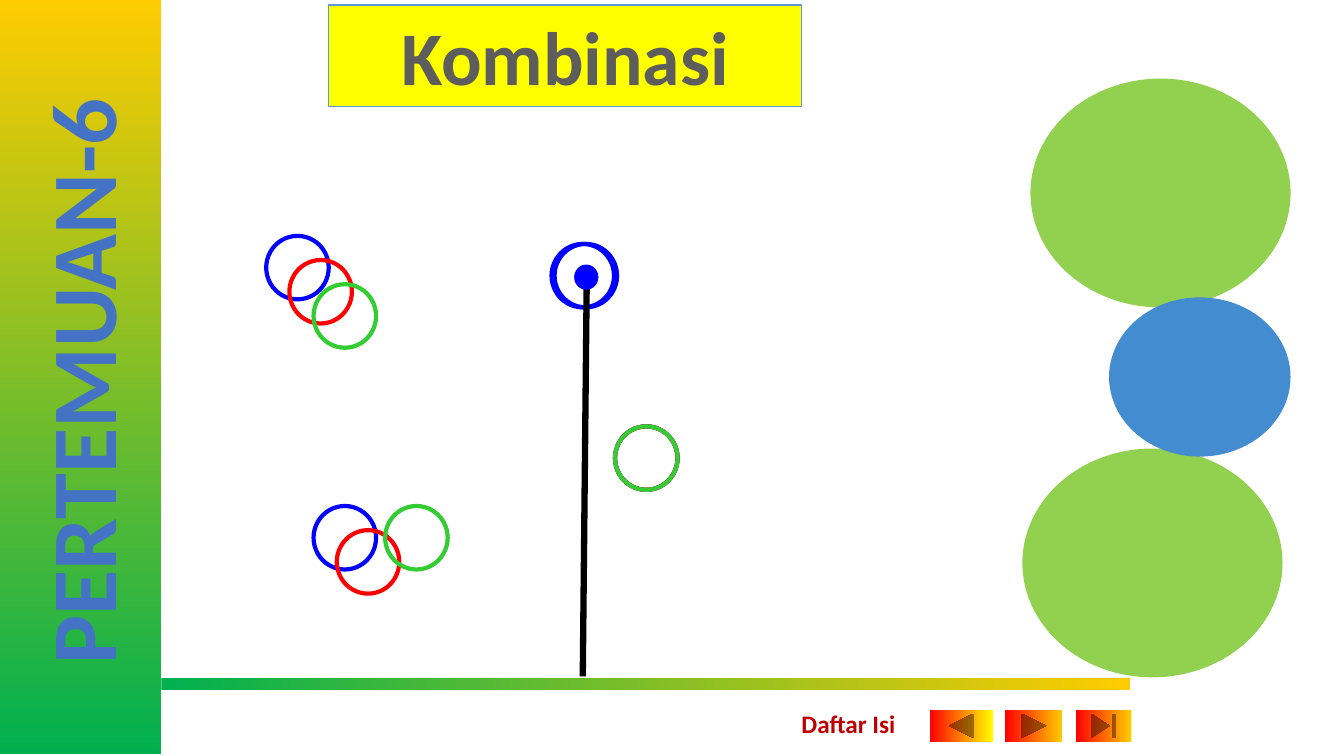
"""Build the Kombinasi slide with its rings, divider and navigation buttons."""
from dataclasses import dataclass
from typing import Optional

from lxml.etree import SubElement
from pptx import Presentation
from pptx.dml.color import RGBColor
from pptx.enum.shapes import MSO_CONNECTOR, MSO_SHAPE
from pptx.enum.text import MSO_ANCHOR, MSO_AUTO_SIZE, PP_ALIGN
from pptx.oxml import parse_xml
from pptx.oxml.ns import nsdecls, qn
from pptx.util import Inches, Pt

GREEN = RGBColor(0x00, 0xB0, 0x50)
GOLD = RGBColor(0xFF, 0xCC, 0x00)
LIME = RGBColor(0x92, 0xD0, 0x50)
SKY = RGBColor(0x43, 0x8C, 0xCF)
YELLOW = RGBColor(0xFF, 0xFF, 0x00)
BORDER = RGBColor(0x5B, 0x9B, 0xD5)
BLUE = RGBColor(0x00, 0x00, 0xFF)
RED = RGBColor(0xFF, 0x00, 0x00)
RING_GREEN = RGBColor(0x33, 0xCC, 0x33)
BLACK = RGBColor(0x00, 0x00, 0x00)
TITLE_GREY = RGBColor(0x5D, 0x5D, 0x5D)
MEETING_BLUE = RGBColor(0x44, 0x72, 0xC4)
CONTENTS_RED = RGBColor(0xC0, 0x00, 0x00)

RING_SIZE = (0.62, 0.63)


@dataclass
class Figure:
    preset: MSO_SHAPE
    box: tuple[float, float, float, float]
    fills: tuple[RGBColor, ...] = ()
    outline: Optional[RGBColor] = None
    weight: float = 0
    rotation: float = 0


@dataclass
class Label:
    text: str
    size: float
    colour: RGBColor
    align: PP_ALIGN = PP_ALIGN.CENTER
    wrap: bool = False


@dataclass
class RingGroup:
    corners: tuple[tuple[float, float], ...]
    colours: tuple[RGBColor, ...] = (BLUE, RED, RING_GREEN)


BANDS = (
    Figure(MSO_SHAPE.RECTANGLE, (-2.96, 2.93, 7.5, 1.61), (GREEN, GOLD), rotation=270),
    Figure(MSO_SHAPE.RECTANGLE, (1.6, 6.73, 9.61, 0.12), (GREEN, GOLD)),
)
DISCS = (
    Figure(MSO_SHAPE.OVAL, (10.14, 4.45, 2.58, 2.27), (LIME,)),
    Figure(MSO_SHAPE.OVAL, (10.22, 0.78, 2.58, 2.27), (LIME,)),
    Figure(MSO_SHAPE.OVAL, (11, 2.95, 1.8, 1.58), (SKY,)),
)
BUTTONS = (
    Figure(MSO_SHAPE.ACTION_BUTTON_FORWARD_OR_NEXT, (9.97, 7.04, 0.57, 0.32), (RED, GOLD)),
    Figure(MSO_SHAPE.ACTION_BUTTON_END, (10.67, 7.04, 0.55, 0.32), (RED, GOLD)),
    Figure(MSO_SHAPE.ACTION_BUTTON_BACK_OR_PREVIOUS, (9.22, 7.04, 0.63, 0.32), (RED, YELLOW)),
)
TITLE_PANEL = Figure(MSO_SHAPE.RECTANGLE, (3.26, 0.05, 4.69, 1.01), (YELLOW,), BORDER, 1)
POLE_TOP = Figure(MSO_SHAPE.OVAL, (5.7, 2.63, 0.23, 0.24), (BLUE,), BLUE, 0.75)
RING_GROUPS = (
    RingGroup(((2.64, 2.34), (2.87, 2.58), (3.11, 2.82))),
    RingGroup(((5.47, 2.42), (5.5, 2.42)), (BLUE, BLUE)),
    RingGroup(((6.1, 4.23),) * 3),
    RingGroup(((3.11, 5.02), (3.34, 5.26), (3.82, 5.02))),
)


def draw_figure(shapes, figure: Figure):
    """Draw a preset shape with its fill and outline."""
    shape = shapes.add_shape(figure.preset, *map(Inches, figure.box))
    shape.rotation = figure.rotation
    shape.shadow.inherit = False
    if len(figure.fills) > 1:
        shape.fill.gradient()
        shape.fill.gradient_angle = 0
        for stop, colour, position in zip(shape.fill.gradient_stops, figure.fills, (0, 1)):
            stop.color.rgb = colour
            stop.position = position
    elif figure.fills:
        shape.fill.solid()
        shape.fill.fore_color.rgb = figure.fills[0]
    else:
        shape.fill.background()
    if figure.outline is None:
        shape.line.fill.background()
    else:
        shape.line.color.rgb = figure.outline
        shape.line.width = Pt(figure.weight)
    return shape


def write_label(holder, label: Label):
    """Write one bold line into a shape or text box and return its run."""
    frame = holder.text_frame
    frame_format = {
        "word_wrap": label.wrap,
        "auto_size": MSO_AUTO_SIZE.SHAPE_TO_FIT_TEXT,
        "vertical_anchor": MSO_ANCHOR.TOP,
    }
    for name, value in frame_format.items():
        setattr(frame, name, value)
    paragraph = frame.paragraphs[0]
    paragraph.alignment = label.align
    run = paragraph.add_run()
    run.text = label.text
    font_format = {"name": "Calibri", "size": Pt(label.size), "bold": True}
    for name, value in font_format.items():
        setattr(run.font, name, value)
    run.font.color.rgb = label.colour
    return run


def cast_text_shadow(run) -> None:
    """Give a run a soft shadow to the lower right."""
    shadow = parse_xml(
        f'<a:effectLst {nsdecls("a")}><a:outerShdw blurRad="50800" dist="38100" dir="2700000">'
        '<a:srgbClr val="000000"><a:alpha val="60000"/></a:srgbClr></a:outerShdw></a:effectLst>'
    )
    run.font.fill._xPr.find(qn("a:solidFill")).addnext(shadow)


def draw_pole(shapes) -> None:
    """Draw the thick black pole."""
    pole = shapes.add_connector(MSO_CONNECTOR.STRAIGHT, *map(Inches, (5.82, 2.74, 5.78, 6.71)))
    pole.line.color.rgb = BLACK
    pole.line.width = Pt(4.5)
    SubElement(pole._element.spPr, qn("a:effectLst"))


def main() -> None:
    """Assemble and save the slide."""
    deck = Presentation()
    deck.slide_width, deck.slide_height = Inches(13.33), Inches(7.5)
    shapes = deck.slides.add_slide(deck.slide_layouts[6]).shapes

    side_band, footer_band = BANDS
    draw_figure(shapes, side_band)
    meeting = shapes.add_textbox(*map(Inches, (-2.15, 3.18, 5.88, 1.21)))
    meeting.rotation = 270
    cast_text_shadow(write_label(meeting, Label("PERTEMUAN-6", 66, MEETING_BLUE)))
    for figure in (footer_band, *DISCS, *BUTTONS):
        draw_figure(shapes, figure)

    contents = shapes.add_textbox(*map(Inches, (7.85, 6.98, 1.15, 0.4)))
    write_label(contents, Label("Daftar Isi", 18, CONTENTS_RED, PP_ALIGN.LEFT))
    title = draw_figure(shapes, TITLE_PANEL)
    write_label(title, Label("Kombinasi", 54, TITLE_GREY, wrap=True))

    for group in RING_GROUPS:
        for corner, colour in zip(group.corners, group.colours):
            ring = Figure(MSO_SHAPE.OVAL, (*corner, *RING_SIZE), outline=colour, weight=3)
            draw_figure(shapes, ring)
    draw_pole(shapes)
    draw_figure(shapes, POLE_TOP)
    deck.save("out.pptx")


if __name__ == "__main__":
    main()
